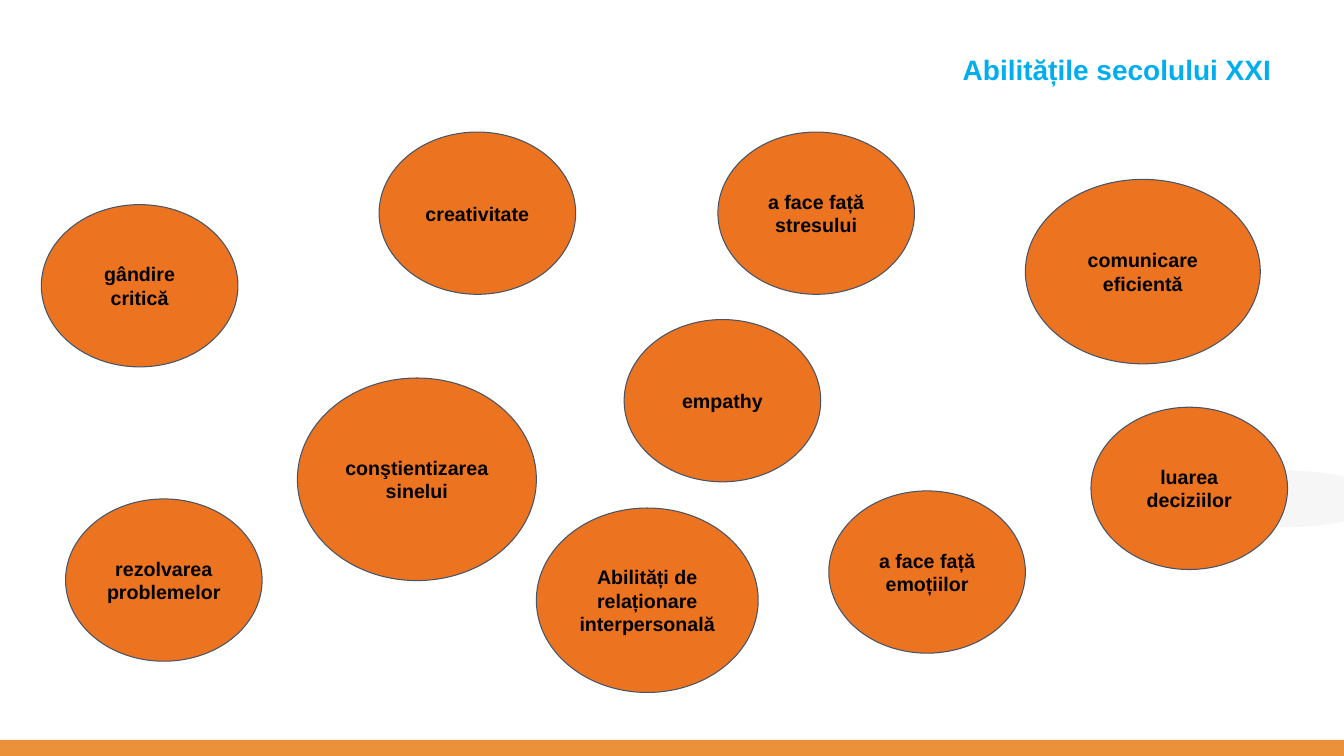
from lxml import etree
from pptx import Presentation
from pptx.dml.color import RGBColor
from pptx.enum.shapes import MSO_SHAPE
from pptx.enum.text import MSO_ANCHOR, MSO_AUTO_SIZE, PP_ALIGN
from pptx.oxml.ns import qn
from pptx.util import Inches, Pt

OVAL, RECTANGLE = MSO_SHAPE.OVAL, MSO_SHAPE.RECTANGLE
TOP, MIDDLE = MSO_ANCHOR.TOP, MSO_ANCHOR.MIDDLE
CENTER, RIGHT = PP_ALIGN.CENTER, PP_ALIGN.RIGHT
NO_AUTOFIT = MSO_AUTO_SIZE.NONE
TITLE_ONLY = 5

ORANGE, SLATE, BLACK = "EC7320", "44546A", "000000"
CYAN, FOOTER_ORANGE, PALE_GREY = "00AEEF", "EA9139", "F5F5F5"

USUAL_SIZE = (1.95, 1.61)
SKILLS = [
    ("a face față stresului", 7.12, 1.31, USUAL_SIZE),
    ("comunicare eficientă", 10.17, 1.78, (2.33, 1.83)),
    ("Abilități de relaționare interpersonală", 5.32, 5.04, (2.2, 1.83)),
    ("rezolvarea problemelor", 0.65, 4.95, USUAL_SIZE),
    ("luarea deciziilor", 10.82, 4.04, USUAL_SIZE),
    ("creativitate", 3.76, 1.31, USUAL_SIZE),
    ("gândire critică", 0.41, 2.03, USUAL_SIZE),
    ("empathy", 6.19, 3.17, USUAL_SIZE),
    ("conştientizarea sinelui", 2.95, 3.75, (2.37, 2.01)),
    ("a face față emoțiilor", 8.22, 4.87, USUAL_SIZE),
]


def color(hex_value):
    return RGBColor.from_string(hex_value)


def set_attributes(target, values):
    for name, value in values.items():
        setattr(target, name, value)


def write_text(shape, text, size, hex_value, align, anchor, vertical_inset):
    frame = shape.text_frame
    frame.text = text
    set_attributes(frame, {
        "word_wrap": True, "auto_size": NO_AUTOFIT, "vertical_anchor": anchor,
        "margin_left": Inches(0.1), "margin_right": Inches(0.1),
        "margin_top": Inches(vertical_inset),
        "margin_bottom": Inches(vertical_inset),
    })
    paragraph = frame.paragraphs[0]
    set_attributes(paragraph, {"alignment": align, "space_before": Pt(0)})
    font = paragraph.runs[0].font
    set_attributes(font, {"name": "Arial", "size": Pt(size), "bold": True})
    font.color.rgb = color(hex_value)
    return paragraph


def add_filled(slide, preset, left, top, width, height, fill):
    shape = slide.shapes.add_shape(
        preset, Inches(left), Inches(top), Inches(width), Inches(height))
    shape.shadow.inherit = False
    shape.fill.solid()
    shape.fill.fore_color.rgb = color(fill)
    shape.line.fill.background()
    return shape


def set_opacity(shape, percent):
    fill_color = shape.fill._xPr.find(qn("a:solidFill"))[0]
    etree.SubElement(fill_color, qn("a:alpha"), val=str(percent * 1000))


def add_title(slide, text):
    title = slide.shapes.title
    set_attributes(title, {
        "left": Inches(3.21), "top": Inches(0.51),
        "width": Inches(9.5), "height": Inches(0.92),
    })
    paragraph = write_text(title, text, 20, CYAN, RIGHT, TOP, 0.05)
    paragraph.line_spacing = 0.9


def add_skill(slide, text, left, top, size):
    bubble = add_filled(slide, OVAL, left, top, *size, ORANGE)
    bubble.line.color.rgb = color(SLATE)
    bubble.line.width = Pt(0.75)
    write_text(bubble, text, 14, BLACK, CENTER, MIDDLE, 0.1)


def main():
    deck = Presentation()
    set_attributes(deck, {
        "slide_width": Inches(13.33), "slide_height": Inches(7.5)})
    slide = deck.slides.add_slide(deck.slide_layouts[TITLE_ONLY])
    edge_ellipse = add_filled(slide, OVAL, 11.78, 4.67, 1.92, 0.56, PALE_GREY)
    set_opacity(edge_ellipse, 89)
    add_filled(slide, RECTANGLE, 0, 7.34, 13.33, 0.16, FOOTER_ORANGE)
    add_title(slide, "Abilitățile secolului XXI")
    for skill in SKILLS:
        add_skill(slide, *skill)
    deck.save("out.pptx")


if __name__ == "__main__":
    main()
